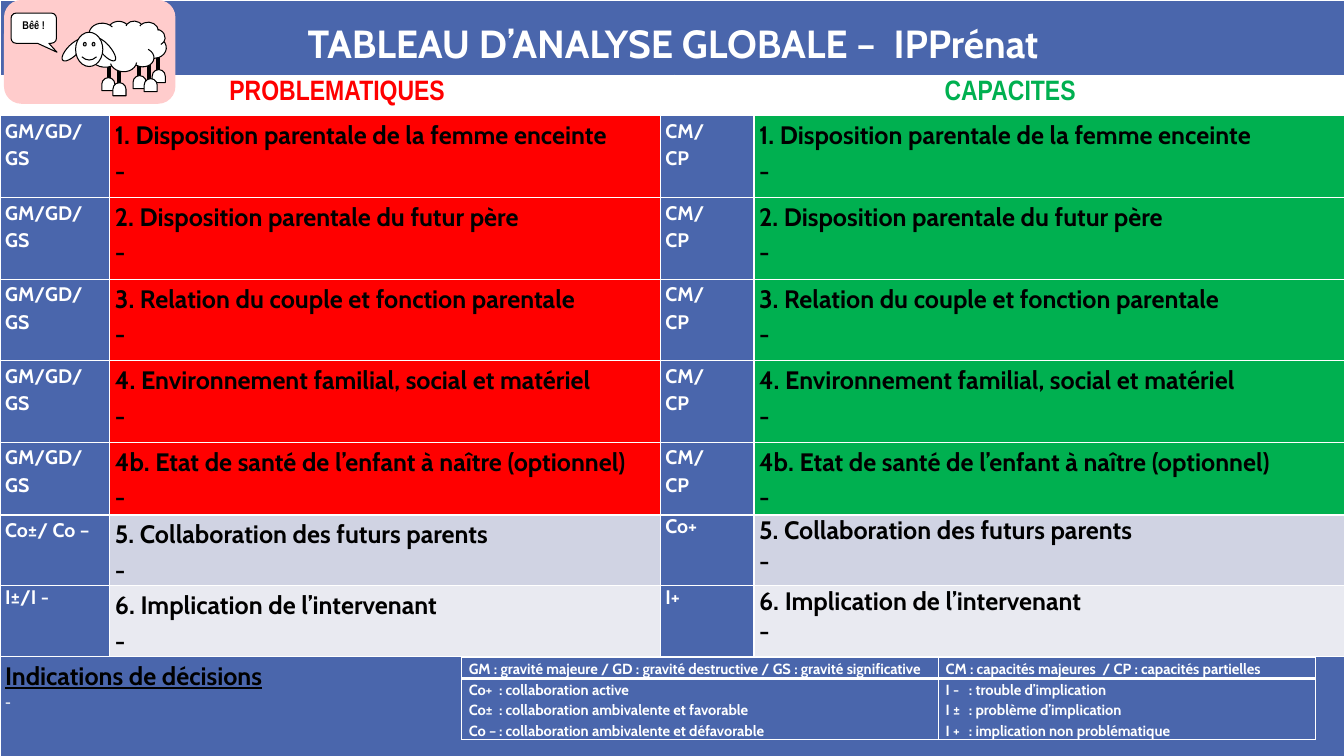
from dataclasses import dataclass, replace
from typing import Optional

import pptx
import pptx.dml.color
import pptx.enum.shapes
import pptx.enum.text
import pptx.oxml
import pptx.oxml.ns
import pptx.util
from pptx.util import Inches

COLORS = {
    "blue": "4A66AC", "red": "FF0000", "green": "00B050", "white": "FFFFFF",
    "black": "000000", "lavender": "D0D3E3", "mist": "E9EAF1", "pink": "FFCCCC",
}
ALIGN = pptx.enum.text.PP_ALIGN
MSO = pptx.enum.shapes.MSO_SHAPE


@dataclass(frozen=True)
class TextStyle:
    size: float
    color: str = "white"
    font: str = "Cabin"
    align: ALIGN = ALIGN.LEFT
    spacing: Optional[float] = 1.15
    underline: bool = False


@dataclass(frozen=True)
class Topic:
    title: str
    problem_code: str
    capacity_code: str
    problem_fill: str
    capacity_fill: str
    height: float


@dataclass(frozen=True)
class Part:
    kind: MSO
    left: float
    top: float
    width: float
    height: float
    rotation: float = 0
    adjustments: tuple[float, ...] = ()
    fill: str = "white"
    outlined: bool = True


@dataclass(frozen=True)
class Leg:
    x: float
    top: float
    bottom: float


TITLE = TextStyle(28, align=ALIGN.CENTER)
HEADING = TextStyle(20, font="Arial Narrow", align=ALIGN.CENTER)
CODE = TextStyle(14)
BODY = TextStyle(18, "black", align=ALIGN.JUSTIFY)
LEGEND = TextStyle(10.5)

SEVERITY, CAPACITY = "GM/GD/\nGS", "CM/\nCP"
TOPICS = [
    Topic(title, SEVERITY, CAPACITY, "red", "green", height)
    for title, height in (
        ("1. Disposition parentale de la femme enceinte", 0.81),
        ("2. Disposition parentale du futur père", 0.81),
        ("3. Relation du couple et fonction parentale", 0.81),
        ("4. Environnement familial, social et matériel", 0.81),
        ("4b. Etat de santé de l’enfant à naître (optionnel)", 0.72),
    )
] + [
    Topic("5. Collaboration des futurs parents", "Co±/ Co –", "Co+", "lavender", "lavender", 0.62),
    Topic("6. Implication de l’intervenant", "I±/I -", "I+", "mist", "mist", 0.66),
]
LEGENDS = [
    ["GM : gravité majeure / GD : gravité destructive / GS : gravité significative",
     "CM\u00a0: capacités majeures  / CP : capacités partielles"],
    ["Co+\t: collaboration active\nCo±\t: collaboration ambivalente et favorable\n"
     "Co –\t: collaboration ambivalente et défavorable",
     "I -\t: trouble d’implication\nI ±\t: problème d’implication\n"
     "I +\t: implication non problématique"],
]
LEGEND_TABS = (0.3, 0.23)

BADGE = [
    Part(MSO.ROUNDED_RECTANGLE, 0.04, 0, 1.7, 1.03, adjustments=(0.167,), fill="pink", outlined=False),
    Part(MSO.ROUNDED_RECTANGULAR_CALLOUT, 0.11, 0.13, 0.45, 0.3, adjustments=(0.513, 0.796, 0.167)),
]
LEGS = [Leg(1.08, 0.61, 0.85), Leg(1.18, 0.67, 0.9), Leg(1.38, 0.58, 0.82),
        Leg(1.48, 0.61, 0.85), Leg(1.57, 0.56, 0.8)]
SHEEP = [
    Part(MSO.OVAL, 0.58, 0.44, 0.29, 0.11, 134.9),
    Part(MSO.CLOUD_CALLOUT, 0.8, 0.2, 0.85, 0.51, 4.4, (-0.292, 0.121)),
    Part(MSO.OVAL, 0.9, 0.44, 0.29, 0.1, 49.1),
    Part(MSO.SMILEY_FACE, 0.75, 0.32, 0.27, 0.34, adjustments=(0.047,)),
] + [
    Part(MSO.FLOWCHART_DELAY, x, y, 0.13, 0.13, 270)
    for x, y in ((1.01, 0.77), (1.12, 0.82), (1.32, 0.75), (1.51, 0.69), (1.43, 0.78))
]


def rgb(name: str) -> pptx.dml.color.RGBColor:
    return pptx.dml.color.RGBColor.from_string(COLORS[name])


def style_paragraph(p, style: TextStyle) -> None:
    p.alignment = style.align
    if style.spacing:
        p.line_spacing = style.spacing
    for r in p.runs:
        r.font.size = pptx.util.Pt(style.size)
        r.font.name = style.font
        r.font.bold = True
        r.font.underline = style.underline
        r.font.color.rgb = rgb(style.color)


def set_borders(cell, bottom: float = 1) -> None:
    for side in "LRTB":
        width = pptx.util.Pt(bottom if side == "B" else 1)
        cell._tc.get_or_add_tcPr().append(pptx.oxml.parse_xml(
            f'<a:ln{side} {pptx.oxml.ns.nsdecls("a")} w="{width}"><a:solidFill>'
            f'<a:srgbClr val="{COLORS["white"]}"/></a:solidFill></a:ln{side}>'))


def add_tab_stop(p, position: float) -> None:
    p._p.get_or_add_pPr().append(pptx.oxml.parse_xml(
        f'<a:tabLst {pptx.oxml.ns.nsdecls("a")}>'
        f'<a:tab pos="{Inches(position)}" algn="l"/></a:tabLst>'))


def fill_cell(cell, text: str, style: TextStyle, fill: Optional[str], margin: float = 0.05) -> None:
    cell.margin_left = cell.margin_right = Inches(margin)
    cell.margin_top = cell.margin_bottom = 0
    if fill:
        cell.fill.solid()
        cell.fill.fore_color.rgb = rgb(fill)
    else:
        cell.fill.background()
    cell.text_frame.text = text
    for p in cell.text_frame.paragraphs:
        style_paragraph(p, style)


def add_grid(shapes, left: float, top: float, widths: list[float], heights: list[float]):
    """Add an unbanded table with white borders, thicker under the first row."""
    table = shapes.add_table(len(heights), len(widths), Inches(left), Inches(top),
                             Inches(sum(widths)), Inches(sum(heights))).table
    table.first_row = table.horz_banding = False
    for column, width in zip(table.columns, widths):
        column.width = Inches(width)
    for i, (row, height) in enumerate(zip(table.rows, heights)):
        row.height = Inches(height)
        for cell in row.cells:
            set_borders(cell, 1 if i else 3)
    return table


def add_analysis(shapes) -> None:
    heights = [0.76, 0.39, *(topic.height for topic in TOPICS), 1.55]
    table = add_grid(shapes, 0, 0, [1.09, 5.46, 0.12, 0.79, 5.87], heights)
    last = len(heights) - 1
    for row, first, end in ((0, 0, 4), (1, 0, 2), (1, 3, 4), (last, 0, 4)):
        table.cell(row, first).merge(table.cell(row, end))
    fill_cell(table.cell(0, 0), "TABLEAU D’ANALYSE GLOBALE –  IPPrénat", TITLE, "blue")
    table.cell(0, 0).margin_top = Inches(0.13)
    fill_cell(table.cell(1, 0), "PROBLEMATIQUES", replace(HEADING, color="red"), None)
    fill_cell(table.cell(1, 3), "CAPACITES", replace(HEADING, color="green"), None)
    for row, topic in enumerate(TOPICS, 2):
        table.cell(row, 2).merge(table.cell(row, 3))
        single = topic.capacity_code != CAPACITY
        code = replace(CODE, spacing=None) if single else CODE
        body = replace(BODY, spacing=None, align=ALIGN.LEFT) if single else BODY
        problem_code = code if topic.problem_code.startswith("I") else CODE
        text = topic.title + "\n-"
        fill_cell(table.cell(row, 0), topic.problem_code, problem_code, "blue")
        fill_cell(table.cell(row, 1), text, BODY, topic.problem_fill)
        fill_cell(table.cell(row, 2), topic.capacity_code, code, "blue")
        fill_cell(table.cell(row, 4), text, body, topic.capacity_fill)
    decisions = table.cell(last, 0)
    fill_cell(decisions, "Indications de décisions\n-", replace(BODY, underline=True), "blue")
    style_paragraph(decisions.text_frame.paragraphs[1], replace(BODY, size=10, color="white"))


def add_legend(shapes) -> None:
    table = add_grid(shapes, 4.58, 6.52, [4.73, 3.74], [0.21, 0.54])
    for i, texts in enumerate(LEGENDS):
        for j, text in enumerate(texts):
            fill_cell(table.cell(i, j), text, LEGEND, "blue", 0.07)
    for j, position in enumerate(LEGEND_TABS):
        for p in table.cell(1, j).text_frame.paragraphs:
            add_tab_stop(p, position)


def add_part(shapes, part: Part) -> None:
    s = shapes.add_shape(part.kind, Inches(part.left), Inches(part.top),
                         Inches(part.width), Inches(part.height))
    s.shadow.inherit = False
    s.rotation = part.rotation
    for i, value in enumerate(part.adjustments):
        s.adjustments[i] = value
    s.fill.solid()
    s.fill.fore_color.rgb = rgb(part.fill)
    if part.outlined:
        s.line.color.rgb = rgb("black")
        s.line.width = pptx.util.Pt(0.75)
    else:
        s.line.fill.background()


def add_leg(shapes, leg: Leg) -> None:
    s = shapes.add_connector(pptx.enum.shapes.MSO_CONNECTOR.STRAIGHT, Inches(leg.x),
                             Inches(leg.top), Inches(leg.x), Inches(leg.bottom))
    s.line.color.rgb = rgb("black")
    s.line.width = pptx.util.Pt(3)
    s._element.spPr.append(pptx.oxml.parse_xml(f'<a:effectLst {pptx.oxml.ns.nsdecls("a")}/>'))


def add_sheep_badge(shapes) -> None:
    group = shapes.add_group_shape().shapes
    for part in BADGE:
        add_part(group, part)
    for leg in LEGS:
        add_leg(group, leg)
    for part in SHEEP:
        add_part(group, part)
    tf = group.add_textbox(0, Inches(0.13), Inches(0.67), Inches(0.36)).text_frame
    tf.word_wrap = True
    tf.text = "Bêê\u00a0!"
    style_paragraph(tf.paragraphs[0], TextStyle(8, "black", "Arial Narrow", ALIGN.CENTER, None))


def main() -> None:
    prs = pptx.Presentation()
    prs.slide_width, prs.slide_height = Inches(13.33), Inches(7.5)
    shapes = prs.slides.add_slide(prs.slide_layouts[6]).shapes
    add_analysis(shapes)
    add_legend(shapes)
    add_sheep_badge(shapes)
    prs.save("out.pptx")


if __name__ == "__main__":
    main()
